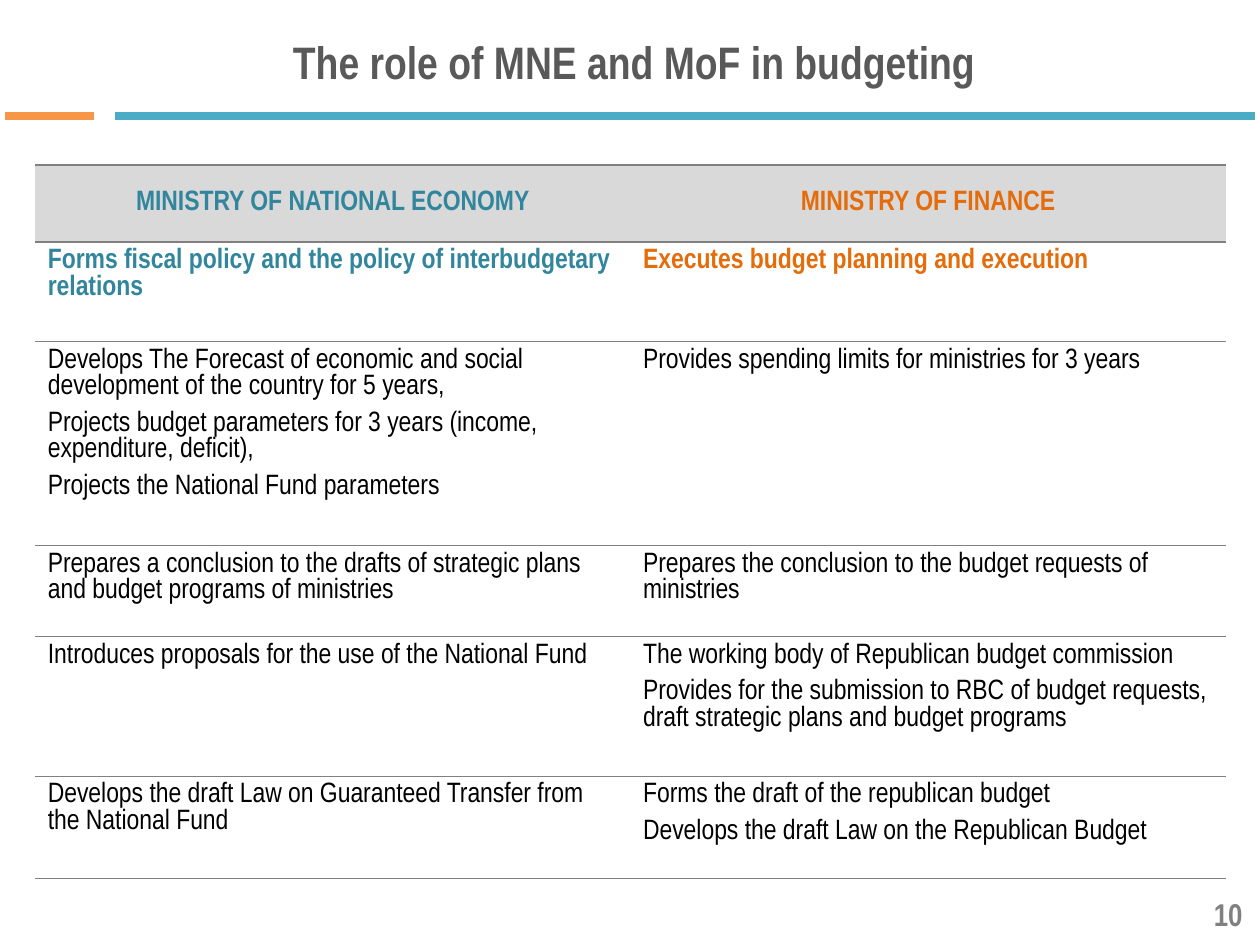
import pptx
import pptx.util
import pptx.dml.color
import pptx.enum.shapes
import pptx.enum.text
import pptx.oxml
import pptx.oxml.ns

Cm, Pt = pptx.util.Cm, pptx.util.Pt
RGB = pptx.dml.color.RGBColor.from_string
ALIGN = pptx.enum.text.PP_ALIGN
MIDDLE = pptx.enum.text.MSO_ANCHOR.MIDDLE
COLORS = {"title": "595959", "grey": "808080", "header": "D9D9D9", "text": "000000",
          "teal": "31859C", "orange": "E46C0A", "bar_teal": "4BACC6", "bar_orange": "F79646"}


def format_text(p, size, color, bold=False, align=ALIGN.LEFT):
    p.alignment = align
    p.font.name = "Arial Narrow"
    p.font.size = Pt(size)
    p.font.bold = bold
    p.font.color.rgb = RGB(COLORS[color])


def set_border(cell, side, width=0):
    if width:
        fill = f'<a:solidFill><a:srgbClr val="{COLORS["grey"]}"/></a:solidFill>'
    else:
        fill = "<a:noFill/>"
    xml = f'<a:{side} {pptx.oxml.ns.nsdecls("a")} w="{Pt(width)}">{fill}</a:{side}>'
    cell._tc.get_or_add_tcPr().append(pptx.oxml.parse_xml(xml))


prs = pptx.Presentation()
prs.slide_width, prs.slide_height = Cm(25.4), Cm(19.05)
s = prs.slides.add_slide(prs.slide_layouts[5])

sp = s.shapes.title
sp.left, sp.top, sp.width, sp.height = Cm(0.89), Cm(0.36), Cm(23.8), Cm(1.75)
tf = sp.text_frame
tf.text = "The role of MNE and MoF in budgeting"
tf.vertical_anchor = MIDDLE
tf.paragraphs[0].space_after = Pt(6)
format_text(tf.paragraphs[0], 26, "title", True, ALIGN.CENTER)

for x1, x2, color in [(2.31, 25.3, "bar_teal"), (0.1, 1.9, "bar_orange")]:
    line = s.shapes.add_connector(pptx.enum.shapes.MSO_CONNECTOR.STRAIGHT,
                                  Cm(x1), Cm(2.33), Cm(x2), Cm(2.33))
    line.line.color.rgb = RGB(COLORS[color])
    line.line.width = Pt(4.5)
    line._element.spPr.append(
        pptx.oxml.parse_xml(f'<a:effectLst {pptx.oxml.ns.nsdecls("a")}/>'))

rows = [
    (1.55, ["МINISTRY OF NATIONAL ECONOMY"], ["МINISTRY OF FINANCE"]),
    (2.01, ["Forms fiscal policy and the policy of interbudgetary relations"],
     ["Executes budget planning and execution"]),
    (4.11, ["Develops The Forecast of economic and social development of the country for 5 years,",
            "Projects budget parameters for 3 years (income, expenditure, deficit),",
            "Projects the National Fund parameters"],
     ["Provides spending limits for ministries for 3 years"]),
    (1.83, ["Prepares a conclusion to the drafts of strategic plans and budget programs of ministries"],
     ["Prepares the conclusion to the budget requests of ministries"]),
    (2.82, ["Introduces proposals for the use of the National Fund"],
     ["The working body of Republican budget commission",
      "Provides for the submission to RBC of budget requests, draft strategic plans and budget programs"]),
    (2.06, ["Develops the draft Law on Guaranteed Transfer from the National Fund"],
     ["Forms the draft of the republican budget",
      "Develops the draft Law on the Republican Budget"]),
]
table = s.shapes.add_table(len(rows), 2, Cm(0.71), Cm(3.33), Cm(24), Cm(14.38)).table
table.horz_banding = False
for i, (height, *texts) in enumerate(rows):
    table.rows[i].height = Cm(height)
    for j, lines in enumerate(texts):
        cell = table.cell(i, j)
        set_border(cell, "lnL")
        set_border(cell, "lnR")
        set_border(cell, "lnT", 1.5 if i < 2 else 0.75)
        set_border(cell, "lnB", 1.5 if i == 0 else 0.75)
        if i == 0:
            cell.fill.solid()
            cell.fill.fore_color.rgb = RGB(COLORS["header"])
            cell.vertical_anchor = MIDDLE
        else:
            cell.fill.background()
        cell.text = "\n".join(lines)
        for p in cell.text_frame.paragraphs:
            color = ("teal", "orange")[j] if i < 2 else "text"
            format_text(p, 16, color, i < 2, ALIGN.CENTER if i == 0 else ALIGN.LEFT)
            if len(lines) > 1:
                p.space_after = Pt(6)

sp = s.shapes.add_textbox(Cm(19.38), Cm(17.91), Cm(5.92), Cm(1.02))
tf = sp.text_frame
tf.word_wrap = True
tf.vertical_anchor = MIDDLE
tf.text = "10"
format_text(tf.paragraphs[0], 18, "grey", True, ALIGN.RIGHT)

prs.save("out.pptx")
